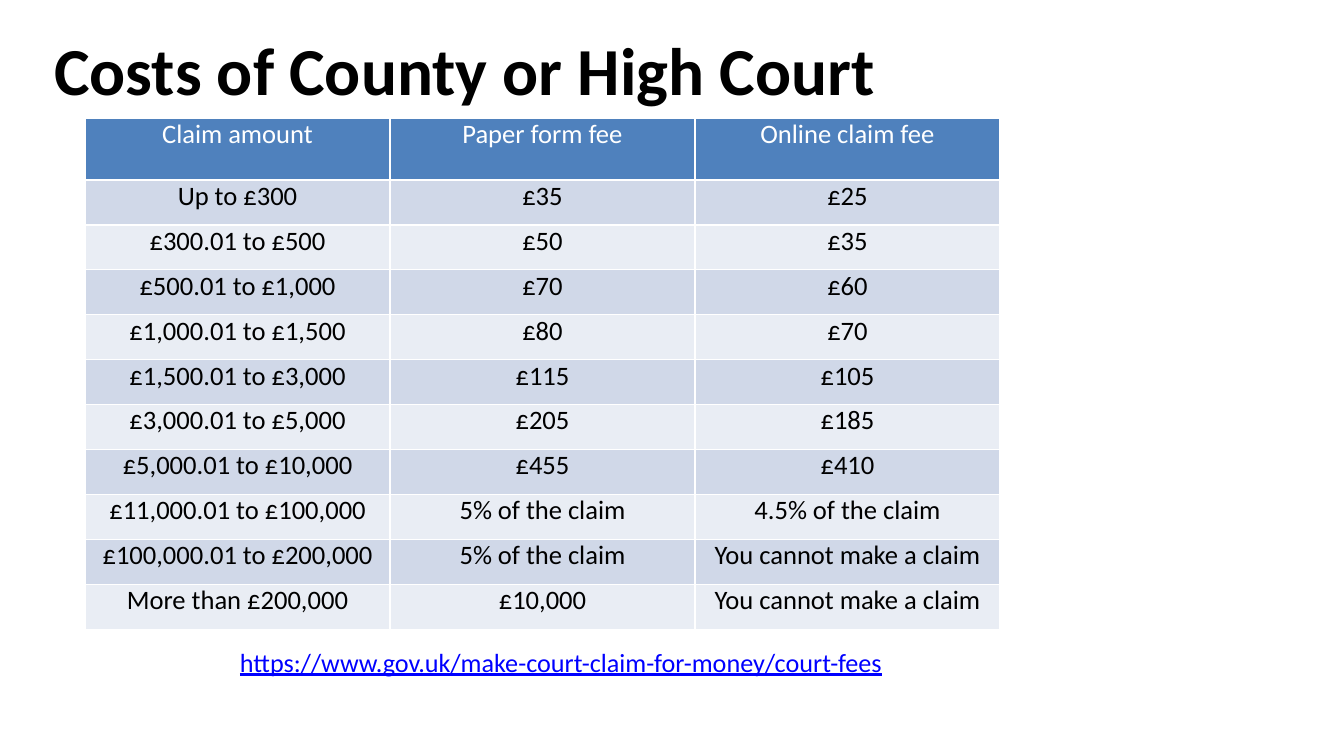
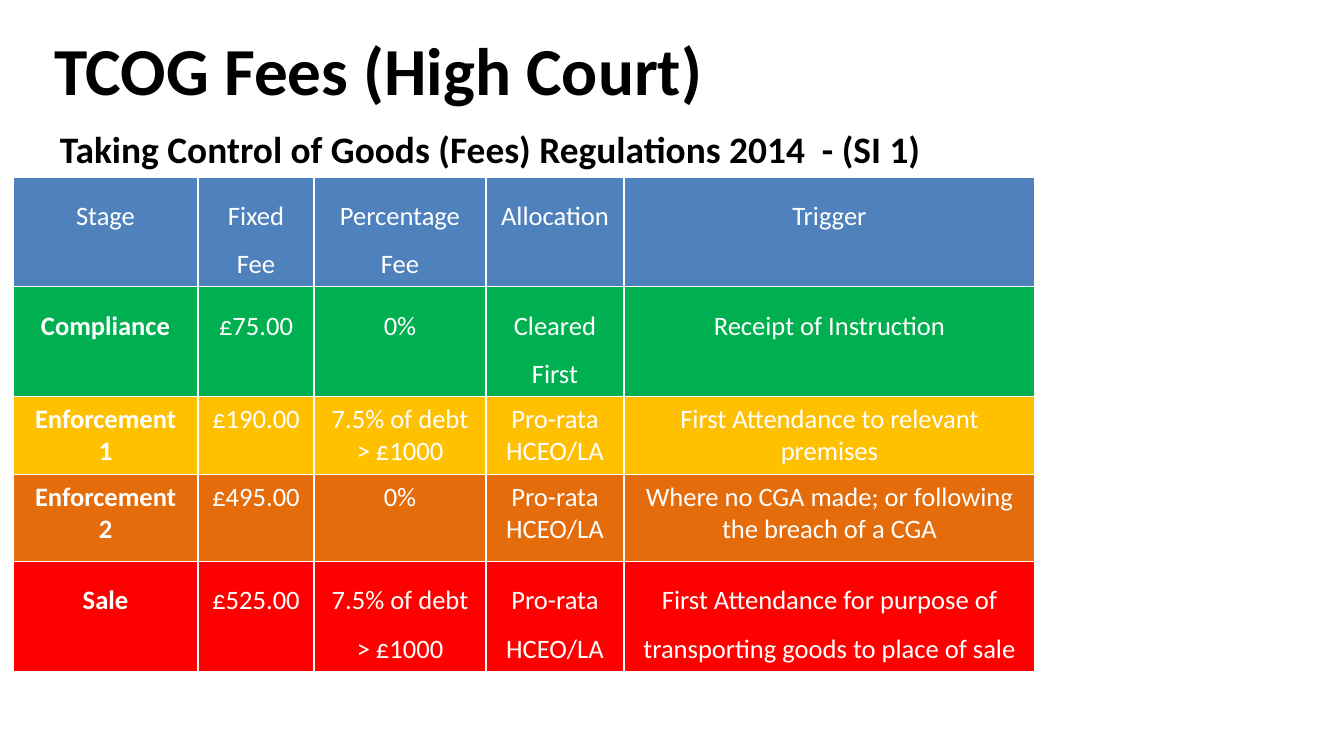
"""Build two slides of court and enforcement fee tables."""
import pptx
import pptx.util
import pptx.dml.color
import pptx.enum.text

RGB = pptx.dml.color.RGBColor
ALIGN = pptx.enum.text.PP_ALIGN
TOP = pptx.enum.text.MSO_ANCHOR.TOP
FIXED = pptx.enum.text.MSO_AUTO_SIZE.NONE

BLACK = RGB(0x00, 0x00, 0x00)
WHITE = RGB(0xFF, 0xFF, 0xFF)
BLUE = RGB(0x4F, 0x81, 0xBD)
DARK = RGB(0xD0, 0xD8, 0xE8)
LIGHT = RGB(0xE9, 0xED, 0xF4)
LINK = RGB(0x00, 0x00, 0xFF)
GREEN = RGB(0x00, 0xB0, 0x50)
AMBER = RGB(0xFF, 0xC0, 0x00)
ORANGE = RGB(0xE4, 0x6C, 0x0A)
RED = RGB(0xFF, 0x00, 0x00)

FONT = "Calibri"
SCALE = 914400 / 100.8
PAGE = (1344, 756)
TITLE = (44, 23, 1276, 92)

COSTS = [
    ("Claim amount", "Paper form fee", "Online claim fee"),
    ("Up to £300", "£35", "£25"),
    ("£300.01 to £500", "£50", "£35"),
    ("£500.01 to £1,000", "£70", "£60"),
    ("£1,000.01 to £1,500", "£80", "£70"),
    ("£1,500.01 to £3,000", "£115", "£105"),
    ("£3,000.01 to £5,000", "£205", "£185"),
    ("£5,000.01 to £10,000", "£455", "£410"),
    ("£11,000.01 to £100,000", "5% of the claim", "4.5% of the claim"),
    ("£100,000.01 to £200,000", "5% of the claim", "You cannot make a claim"),
    ("More than £200,000", "£10,000", "You cannot make a claim"),
]
STAGES = [
    ("Stage", "Fixed Fee", "Percentage Fee", "Allocation", "Trigger"),
    ("Compliance", "£75.00", "0%", "Cleared First", "Receipt of Instruction"),
    ("Enforcement 1", "£190.00", "7.5% of debt > £1000", "Pro-rata HCEO/LA",
     "First Attendance to relevant premises"),
    ("Enforcement 2", "£495.00", "0%", "Pro-rata HCEO/LA",
     "Where no CGA made; or following the breach of a CGA"),
    ("Sale", "£525.00", "7.5% of debt > £1000", "Pro-rata HCEO/LA",
     "First Attendance for purpose of transporting goods to place of sale"),
]
FILLS = [BLUE, GREEN, AMBER, ORANGE, RED]
LEADS = [1.5, 1.5, 1, 1, 1.5]


def px(count):
    """Turn pixels into EMU."""
    return pptx.util.Emu(round(count * SCALE))


def write(frame, text, size=19, color=BLACK, bold=False, line=False,
          align=ALIGN.CENTER, lead=1):
    """Put one formatted paragraph into a text frame."""
    frame.word_wrap = True
    para = frame.paragraphs[0]
    para.alignment = align
    para.line_spacing = lead
    run = para.add_run()
    run.text = text
    font = run.font
    font.name = FONT
    font.size = pptx.util.Pt(size)
    font.bold = bold
    font.underline = line
    font.color.rgb = color


def start(deck, text):
    """Add a slide with its title."""
    slide = deck.slides.add_slide(deck.slide_layouts[5])
    title = slide.shapes.title
    title.left, title.top, title.width, title.height = map(px, TITLE)
    title.text_frame.auto_size = FIXED
    title.text_frame.vertical_anchor = TOP
    write(title.text_frame, text, size=48, bold=True, align=ALIGN.LEFT)
    return slide


def label(slide, box, text, **style):
    """Add a text box."""
    shape = slide.shapes.add_textbox(*map(px, box))
    write(shape.text_frame, text, **style)


def grid(slide, spot, cols, rows, data, inset, look):
    """Add a table; look gives the fill and text format of each cell."""
    box = (*spot, sum(cols), sum(rows))
    table = slide.shapes.add_table(len(rows), len(cols), *map(px, box)).table
    for col, width in zip(table.columns, cols):
        col.width = px(width)
    for row, height in zip(table.rows, rows):
        row.height = px(height)
    side, edge = map(px, inset)
    for r, texts in enumerate(data):
        for c, text in enumerate(texts):
            cell = table.cell(r, c)
            cell.margin_left = cell.margin_right = side
            cell.margin_top = cell.margin_bottom = edge
            fill, style = look(r, c)
            cell.fill.solid()
            cell.fill.fore_color.rgb = fill
            write(cell.text_frame, text, **style)


def band(r, c):
    """Style a cell of the costs table."""
    if r == 0:
        return BLUE, {"color": WHITE}
    return (DARK if r % 2 else LIGHT), {}


def stage(r, c):
    """Style a cell of the stages table."""
    return FILLS[r], {"color": WHITE, "bold": r > 0 and c == 0,
                      "lead": LEADS[r]}


def main():
    """Build and save the deck."""
    deck = pptx.Presentation()
    deck.slide_width, deck.slide_height = map(px, PAGE)

    slide = start(deck, "Costs of County or High Court")
    grid(slide, (85, 118), [305] * 3, [62] + [45] * 10, COSTS, (10, 0), band)
    label(slide, (111, 641, 900, 42),
          "https://www.gov.uk/make-court-claim-for-money/court-fees",
          size=18.7, color=LINK, line=True)

    slide = start(deck, "TCOG Fees (High Court)")
    label(slide, (50, 121, 1000, 101),
          "Taking Control of Goods (Fees) Regulations 2014  - (SI 1)",
          size=26.7, bold=True, align=ALIGN.JUSTIFY)
    grid(slide, (13, 177), [185, 116, 172, 138, 411],
         [109, 109, 78, 87, 109], STAGES, (13, 7), stage)

    deck.save("out.pptx")


if __name__ == "__main__":
    main()
